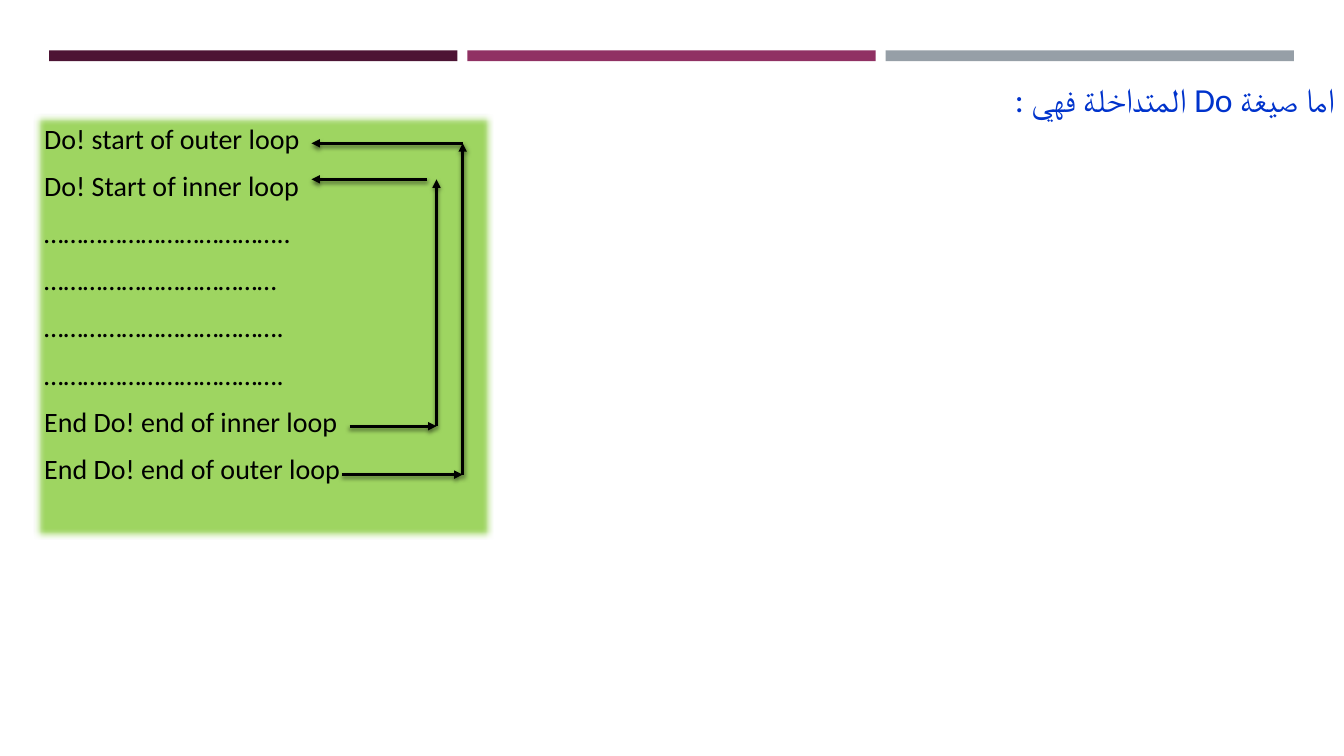
from lxml.etree import SubElement as Sub
from pptx import Presentation
from pptx.dml.color import RGBColor
from pptx.enum.shapes import MSO_CONNECTOR as Link, MSO_SHAPE as Shape
from pptx.enum.text import MSO_ANCHOR as Anchor, MSO_AUTO_SIZE as Fit, PP_ALIGN as Align
from pptx.oxml.ns import qn
from pptx.util import Cm, Pt

FONT = "Calibri"
HUES = {
    "plum": "4D1434",
    "rose": "903163",
    "gray": "969FA7",
    "blue": "0033CC",
    "green": "9ED561",
    "black": "000000",
}
TITLE = "اما صيغة Do المتداخلة فهي :"
CODE = [
    "Do! start of outer loop",
    "Do! Start of inner loop",
    "………………………………..",
    "………………………………",
    "……………………………….",
    "……………………………….",
    "End Do! end of inner loop",
    "End Do! end of outer loop",
]
# Corner points of each loop path: start, end (cm)
LOOPS = [
    [((8.61, 11.96), (11.66, 11.96)), ((11.66, 11.96), (11.66, 3.61)),
     ((11.66, 3.61), (7.85, 3.61))],
    [((8.81, 10.74), (11, 10.74)), ((11, 10.74), (11, 4.52)),
     ((10.77, 4.52), (7.85, 4.52))],
]


def hue(name):
    return RGBColor.from_string(HUES[name])


def place(shape, left, top, width, height):
    shape.left, shape.top = Cm(left), Cm(top)
    shape.width, shape.height = Cm(width), Cm(height)


def add_bar(slide, left, color):
    bar = slide.shapes.add_shape(Shape.RECTANGLE, Cm(left), Cm(1.27), Cm(10.29), Cm(0.27))
    bar.shadow.inherit = False
    bar.fill.solid()
    bar.fill.fore_color.rgb = hue(color)
    bar.line.fill.background()


def add_text(para, text, size, color, align):
    para.alignment = align
    para.line_spacing = 1.07
    para.space_before, para.space_after = Pt(0), Pt(8)
    run = para.add_run()
    run.text = text
    font = run.font
    font.name, font.size = FONT, Pt(size)
    font.color.rgb = hue(color)
    Sub(font._element, qn("a:cs"), typeface=FONT)


def set_title(slide):
    title = slide.shapes.title
    place(title, 16.94, 1.8, 16.92, 1.3)
    frame = title.text_frame
    frame.word_wrap = True
    frame.auto_size = Fit.SHAPE_TO_FIT_TEXT
    frame.vertical_anchor = Anchor.TOP
    para = frame.paragraphs[0]
    para._p.get_or_add_pPr().set("rtl", "1")
    add_text(para, TITLE, 24, "blue", Align.RIGHT)


def set_code(slide):
    box = slide.placeholders[1]
    place(box, 0.86, 2.87, 11.56, 10.72)
    box.fill.solid()
    box.fill.fore_color.rgb = hue("green")
    box.line.color.rgb = hue("black")
    box.line.width = Pt(0.5)
    # Soft edge
    glow = Sub(box._element.spPr, qn("a:effectLst"))
    Sub(glow, qn("a:softEdge"), rad=str(Pt(5)))
    frame = box.text_frame
    frame.word_wrap = True
    frame.auto_size = Fit.NONE
    frame.vertical_anchor = Anchor.TOP
    for num, text in enumerate(CODE):
        para = frame.add_paragraph() if num else frame.paragraphs[0]
        props = para._p.get_or_add_pPr()
        props.set("marL", "0")
        props.set("indent", "0")
        Sub(props, qn("a:buNone"))
        add_text(para, text, 20, "black", Align.LEFT)


def add_arrow(slide, start, end):
    ends = [Cm(num) for num in start + end]
    arrow = slide.shapes.add_connector(Link.STRAIGHT, *ends)
    arrow.line.color.rgb = hue("black")
    arrow.line.width = Pt(2)
    Sub(arrow.line._get_or_add_ln(), qn("a:tailEnd"), type="triangle")
    # Shadow below the line
    glow = Sub(arrow._element.spPr, qn("a:effectLst"))
    shade = Sub(glow, qn("a:outerShdw"), blurRad=str(Pt(3)), dist=str(Pt(2)),
                dir="5400000", rotWithShape="0")
    tint = Sub(shade, qn("a:srgbClr"), val=HUES["black"])
    Sub(tint, qn("a:alpha"), val="55000")


def main():
    deck = Presentation()
    deck.slide_width, deck.slide_height = Cm(33.87), Cm(19.05)
    slide = deck.slides.add_slide(deck.slide_layouts[1])

    # Top bars
    for num, color in enumerate(["plum", "rose", "gray"]):
        add_bar(slide, 1.24 + 10.54 * num, color)

    # Heading and code
    set_title(slide)
    set_code(slide)

    # Loop arrows
    for loop in LOOPS:
        for start, end in loop:
            add_arrow(slide, start, end)

    deck.save("out.pptx")


if __name__ == "__main__":
    main()
